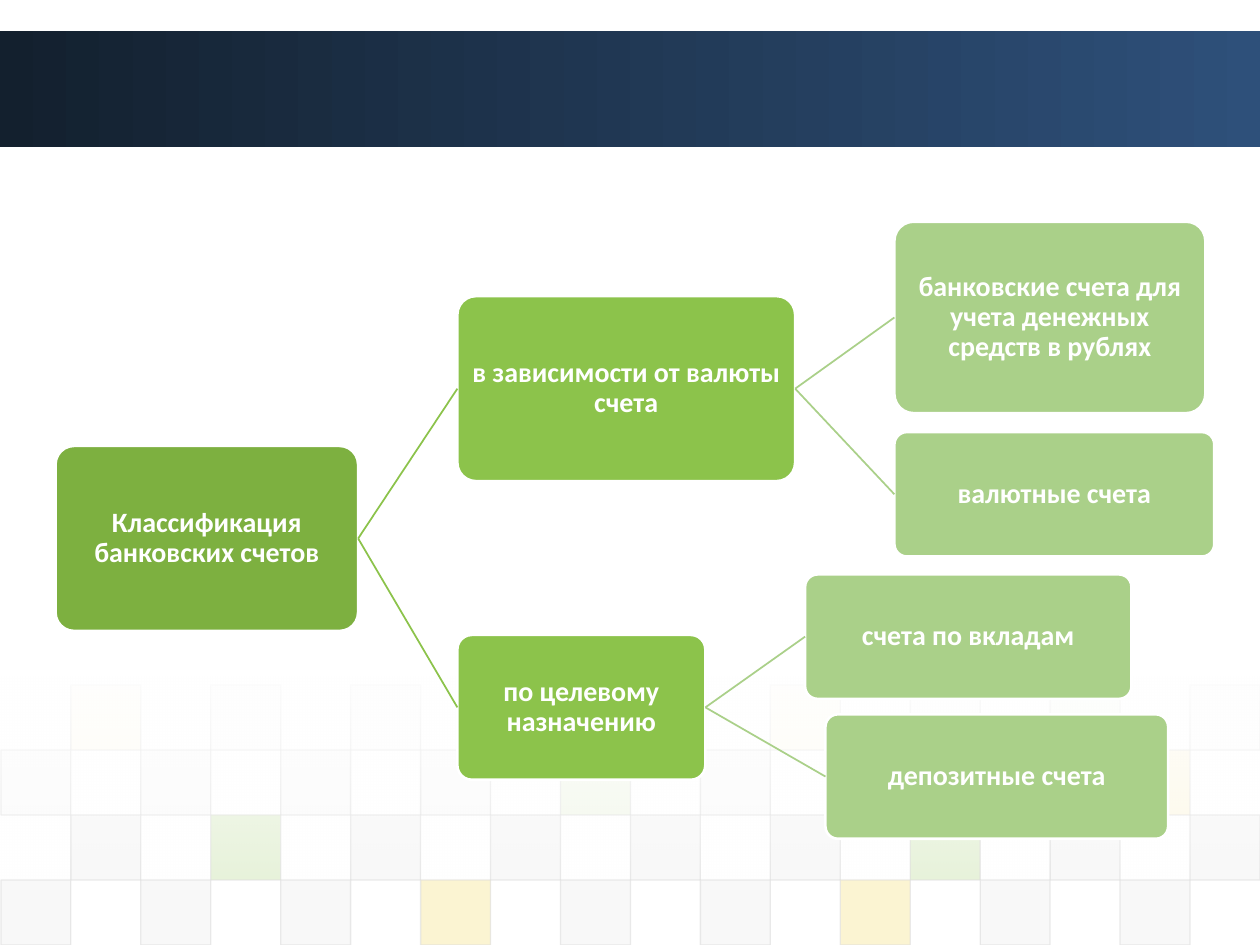
from lxml.etree import SubElement
from pptx import Presentation
from pptx.dml.color import RGBColor
from pptx.enum.shapes import MSO_CONNECTOR as Link, MSO_SHAPE as Shape
from pptx.enum.text import MSO_ANCHOR as Anchor, PP_ALIGN as Align
from pptx.oxml.ns import qn
from pptx.util import Cm, Pt

WHITE = RGBColor(0xFF, 0xFF, 0xFF)
NAVY = RGBColor(0x13, 0x20, 0x2E)
BLUE = RGBColor(0x2E, 0x50, 0x7A)
DARK = RGBColor(0x7D, 0xB0, 0x40)
GREEN = RGBColor(0x8C, 0xC3, 0x4B)
PALE = RGBColor(0xAA, 0xD0, 0x89)
LEAF = RGBColor(0x8A, 0xC2, 0x46)
GOLD = RGBColor(0xEF, 0xC8, 0x21)
GRAY = RGBColor(0xDD, 0xDD, 0xDD)
LIGHT = RGBColor(0xEA, 0xEA, 0xEA)

# Tree: key, parent, level, text, (left, top, width, height) in cm
NODES = [
    ("root", None, 0, "Классификация банковских счетов", (1.12, 8.99, 6.1, 3.73)),
    ("money", "root", 1, "в зависимости от валюты счета", (9.22, 5.97, 6.81, 3.73)),
    ("ruble", "money", 2, "банковские счета для учета денежных средств в рублях",
     (18.03, 4.47, 6.27, 3.86)),
    ("foreign", "money", 2, "валютные счета", (18.03, 8.71, 6.45, 2.51)),
    ("goal", "root", 1, "по целевому назначению", (9.22, 12.8, 5, 2.92)),
    ("saving", "goal", 2, "счета по вкладам", (16.23, 11.58, 6.58, 2.51)),
    ("deposit", "goal", 2, "депозитные счета", (16.64, 14.4, 6.91, 2.51)),
]
LEVELS = [DARK, GREEN, PALE]

# Tile rows: first column, opacity in percent, one letter per second column
TILES = [
    (1, 5, "YEE..YEGE"),
    (0, 10, "DDDDGD..Y"),
    (1, 20, "DGDDDDGDD"),
    (0, 20, "DDDYDDYDD"),
]
TINTS = {"Y": GOLD, "E": LIGHT, "G": LEAF, "D": GRAY}
TILE_W, TILE_H = 1.41, 1.31
TILE_X, TILE_Y = 0.02, 13.81


def fade(part, *levels):
    """Set the opacity, in percent, of each colour inside part."""
    for color, level in zip(part.iter(qn("a:srgbClr")), levels):
        SubElement(color, qn("a:alpha"), val=str(level * 1000))


def block(kind, place, fill=None, line=None, width=0.75):
    shape = slide.shapes.add_shape(kind, *(Cm(n) for n in place))
    shape.shadow.inherit = False
    if fill is not None:
        shape.fill.solid()
        shape.fill.fore_color.rgb = fill
    if line is None:
        shape.line.fill.background()
    else:
        shape.line.color.rgb = line
        shape.line.width = Pt(width)
    return shape


def blend(shape, colors, angle):
    shape.fill.gradient()
    shape.fill.gradient_angle = angle
    for stop, color in zip(shape.fill.gradient_stops, colors):
        stop.color.rgb = color


def write(shape, text, size=16, color=WHITE, bold=True, font="Calibri"):
    frame = shape.text_frame
    frame.word_wrap = True
    frame.vertical_anchor = Anchor.MIDDLE
    frame.margin_left = frame.margin_right = Cm(0.03)
    frame.margin_top = frame.margin_bottom = Cm(0.03)
    para = frame.paragraphs[0]
    para.alignment = Align.CENTER
    para.line_spacing = 0.9
    run = para.add_run()
    run.text = text
    run.font.size, run.font.bold, run.font.name = Pt(size), bold, font
    run.font.color.rgb = color


def join(start, end, color):
    line = slide.shapes.add_connector(Link.STRAIGHT, 0, 0, 0, 0)
    line.begin_connect(start, 3)
    line.end_connect(end, 1)
    line.line.color.rgb = color
    line.line.width = Pt(1)
    SubElement(line.element.spPr, qn("a:effectLst"))


deck = Presentation()
deck.slide_width, deck.slide_height = Cm(25.4), Cm(19.05)
slide = deck.slides.add_slide(deck.slide_layouts[6])

# Banner
blend(block(Shape.RECTANGLE, (0, 0.63, 25.4, 2.34)), (NAVY, BLUE), 0)

# Tiles, with a white veil over the upper rows
for row, (first, level, marks) in enumerate(TILES):
    for n, mark in enumerate(marks):
        if mark in TINTS:
            left = TILE_X + (first + 2 * n) * TILE_W
            top = TILE_Y + row * TILE_H
            tile = block(Shape.RECTANGLE, (left, top, TILE_W, TILE_H), TINTS[mark], GRAY)
            fade(tile.element.spPr, level, 60)
veil = block(Shape.RECTANGLE, (0, 13.64, 25.4, 4.11))
blend(veil, (WHITE, WHITE), 270)
fade(veil.element.spPr, 90, 0)

# Tree of accounts
boxes = {}
for key, parent, depth, text, place in NODES:
    box = block(Shape.ROUNDED_RECTANGLE, place, LEVELS[depth], WHITE, 1.5)
    box.adjustments[0] = 0.1
    write(box, text)
    boxes[key] = box
    if parent:
        join(boxes[parent], box, LEVELS[depth])

deck.save("out.pptx")
